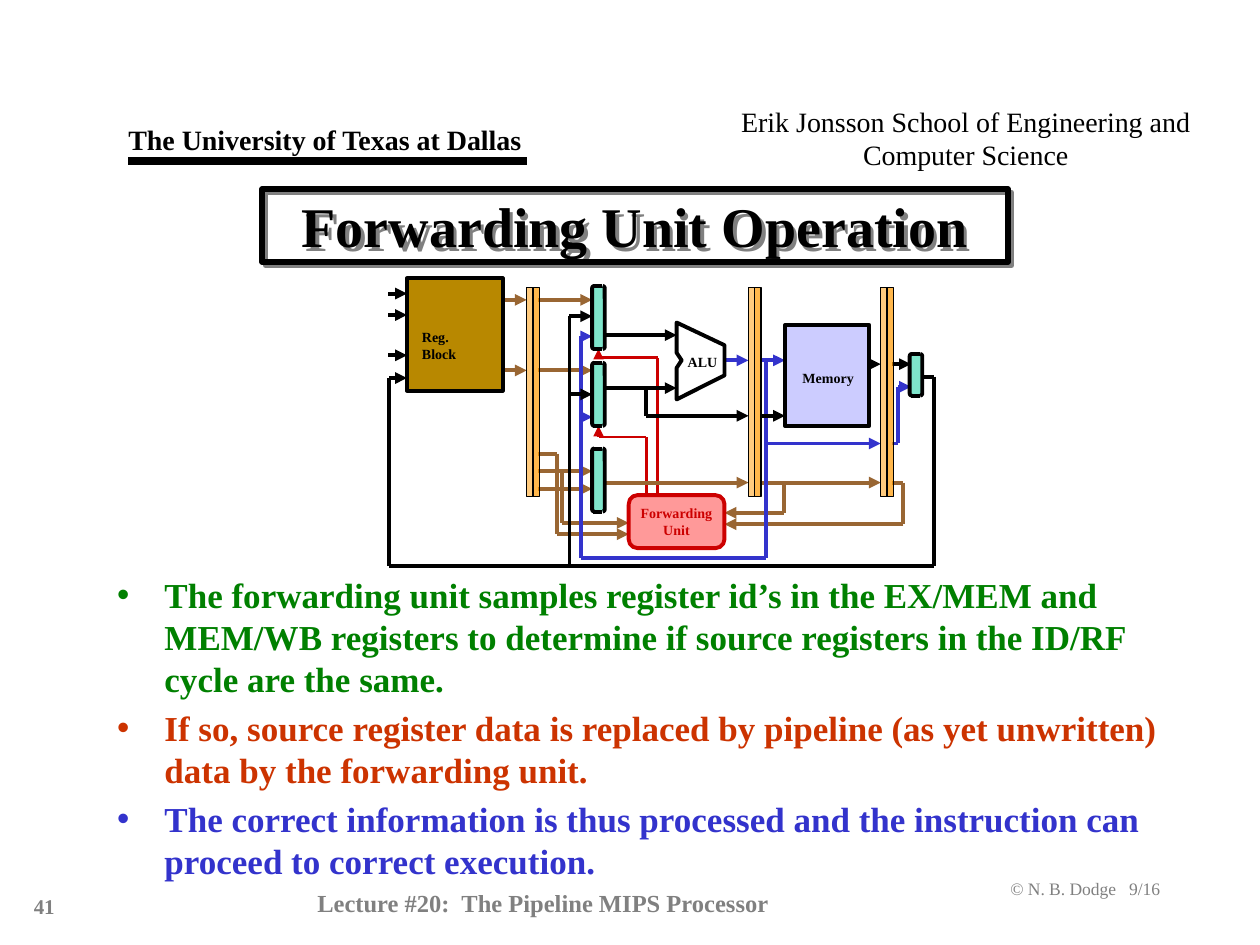
import itertools

import pptx
import pptx.dml.color
import pptx.enum.shapes
import pptx.enum.text
import pptx.oxml.ns
import pptx.oxml.xmlchemy
import pptx.util

Inches = pptx.util.Inches
Pt = pptx.util.Pt
Shape = pptx.enum.shapes.MSO_SHAPE
Align = pptx.enum.text.PP_ALIGN
Anchor = pptx.enum.text.MSO_ANCHOR

FONT = "Times New Roman"
BLACK, GREY, BROWN, BLUE, RED = "000000", "808080", "996633", "3333CC", "CC0000"

TITLE = "Forwarding Unit Operation"
BULLETS = [
    ("The forwarding unit samples register id’s in the EX/MEM and MEM/WB registers "
     "to determine if source registers in the ID/RF cycle are the same.", "008000"),
    ("If so, source register data is replaced by pipeline (as yet unwritten) "
     "data by the forwarding unit.", "CC3300"),
    ("The correct information is thus processed and the instruction can proceed "
     "to correct execution.", BLUE),
]

PAGE_TEXTS = [
    ("Erik Jonsson School of Engineering and Computer Science",
     (5.75, 0.78, 3.83, 0.64), 16, BLACK, False, True, Align.CENTER),
    ("The University of Texas at Dallas",
     (0.92, 0.92, 3.36, 0.37), 16, BLACK, True, False, Align.LEFT),
    ("© N. B. Dodge   9/16", (7.92, 6.92, 1.41, 0.27), 10, GREY, False, False, Align.LEFT),
    ("41", (0.17, 7.04, 0.4, 0.3), 12, GREY, True, False, Align.LEFT),
    ("Lecture #20:  The Pipeline MIPS Processor",
     (2.42, 7, 5, 0.33), 14, GREY, True, True, Align.LEFT),
]
BLOCK_LABELS = [
    ("ALU", (5.36, 2.76, 0.44, 0.23)),
    ("Reg. Block", (3.25, 2.56, 0.71, 0.23)),
    ("Memory", (6.27, 2.88, 0.61, 0.23)),
]

SELECT_WIRES = [
    [(5.13, 3.93), (5.13, 3.47), (4.75, 3.47), (4.75, 3.38)],
    [(5.22, 3.93), (5.22, 2.84), (4.75, 2.84), (4.75, 2.77)],
]
REGISTER_ID_WIRES = [
    [(3.99, 2.38), (4.18, 2.38)],
    [(3.99, 2.94), (4.18, 2.94)],
    [(4.27, 2.38), (4.7, 2.38)],
    [(4.27, 2.94), (4.7, 2.94)],
    [(4.27, 3.74), (4.7, 3.74)],
    [(4.27, 3.88), (4.7, 3.88)],
    [(4.46, 3.74), (4.46, 4.15), (4.99, 4.15)],
    [(4.27, 3.6), (4.42, 3.6), (4.42, 4.24), (4.99, 4.24)],
    [(4.8, 3.83), (5.94, 3.83)],
    [(6.04, 3.83), (6.99, 3.83)],
    [(6.22, 3.83), (6.22, 4.07), (5.75, 4.07)],
    [(7.08, 3.83), (7.17, 3.83), (7.17, 4.16), (5.75, 4.16)],
]
FORWARD_WIRES = [
    [(5.75, 2.86), (5.94, 2.86)],
    [(6.04, 2.86), (6.23, 2.86)],
    [(6.08, 2.86), (6.08, 4.43), (4.61, 4.43), (4.61, 2.67), (4.7, 2.67)],
    [(4.61, 3.31), (4.7, 3.31)],
    [(6.08, 3.52), (6.99, 3.52)],
    [(7.08, 3.52), (7.13, 3.52), (7.13, 3.07), (7.23, 3.07)],
]
DATA_WIRES = [
    [(3.08, 2.33), (3.23, 2.33)],
    [(3.08, 2.5), (3.23, 2.5)],
    [(3.08, 2.82), (3.23, 2.82)],
    [(7.32, 2.99), (7.41, 2.99), (7.41, 4.49), (3.09, 4.49), (3.09, 3), (3.23, 3)],
    [(4.52, 4.49), (4.52, 2.51), (4.7, 2.51)],
    [(4.52, 3.13), (4.7, 3.13)],
    [(4.8, 2.66), (5.37, 2.66)],
    [(4.8, 3.08), (5.37, 3.08)],
    [(5.13, 3.08), (5.13, 3.3), (5.94, 3.3)],
    [(6.04, 3.3), (6.23, 3.3)],
    [(6.89, 2.89), (6.99, 2.89)],
    [(7.08, 2.89), (7.23, 2.89)],
]
WIRING = [(SELECT_WIRES, RED, 1.5), (REGISTER_ID_WIRES, BROWN, 2.25),
          (FORWARD_WIRES, BLUE, 2.25), (DATA_WIRES, BLACK, 2.25)]

ALU_OUTLINE = [(5.37, 2.56), (5.75, 2.74), (5.75, 2.98), (5.37, 3.17),
               (5.37, 2.92), (5.41, 2.86), (5.37, 2.8)]
LATCH_LEFTS = [4.18, 5.94, 6.99]
MUXES = [(4.7, 2.27, 0.5), (4.7, 2.88, 0.5), (4.7, 3.56, 0.5), (7.22, 2.81, 0.33)]


def rgb(colour):
    return pptx.dml.color.RGBColor.from_string(colour)


def add_xml(parent, tag, **attributes):
    child = pptx.oxml.xmlchemy.OxmlElement(tag)
    for name, value in attributes.items():
        child.set(name, str(value))
    parent.append(child)
    return child


def format_text(box, size, colour, bold=True, align=None):
    for para in box.text_frame.paragraphs:
        para.alignment = align
        for span in para.runs:
            span.font.name = FONT
            span.font.size = Pt(size)
            span.font.bold = bold
            span.font.color.rgb = rgb(colour)


def place(box, left, top, width, height):
    box.left, box.top = Inches(left), Inches(top)
    box.width, box.height = Inches(width), Inches(height)


def add_text(page, text, area, size, colour, bold=True, wrap=False, align=Align.LEFT):
    box = page.shapes.add_textbox(*map(Inches, area))
    box.text_frame.word_wrap = wrap
    box.text_frame.text = text
    format_text(box, size, colour, bold, align)


def add_line(page, start, end, colour, width, arrow=False):
    line = page.shapes.add_connector(
        pptx.enum.shapes.MSO_CONNECTOR.STRAIGHT, *map(Inches, start + end))
    line.line.color.rgb = rgb(colour)
    line.line.width = Pt(width)
    if arrow:
        add_xml(line.line._get_or_add_ln(), "a:tailEnd", type="triangle")
    add_xml(line._element.spPr, "a:effectLst")


def add_route(page, points, colour, width):
    for start, end in itertools.pairwise(points):
        add_line(page, start, end, colour, width, end == points[-1])


def style_shape(shape, fill, outline, width, opacity=100):
    shape.shadow.inherit = False
    shape.fill.solid()
    shape.fill.fore_color.rgb = rgb(fill)
    if opacity < 100:
        colour = shape._element.spPr.find(".//" + pptx.oxml.ns.qn("a:srgbClr"))
        add_xml(colour, "a:alpha", val=opacity * 1000)
    shape.line.color.rgb = rgb(outline)
    shape.line.width = Pt(width)


def add_block(page, kind, area, fill, outline=BLACK, width=2.25, opacity=100):
    shape = page.shapes.add_shape(kind, *map(Inches, area))
    style_shape(shape, fill, outline, width, opacity)
    return shape


def add_mux(page, left, top, height):
    add_block(page, Shape.DOUBLE_BRACKET, (left, top, 0.1, height), "00CC99", opacity=50)
    for edge in (top, top + height):
        add_line(page, (left + 0.01, edge), (left + 0.08, edge), BLACK, 2.25)


def add_datapath(page):
    for routes, colour, width in WIRING:
        for points in routes:
            add_route(page, points, colour, width)
    outline = [(Inches(x), Inches(y)) for x, y in ALU_OUTLINE]
    builder = page.shapes.build_freeform(*outline[0])
    builder.add_line_segments(outline[1:], close=True)
    style_shape(builder.convert_to_shape(), "FFFFFF", BLACK, 2.25)
    add_block(page, Shape.RECTANGLE, (3.23, 2.21, 0.76, 0.89), "B88800")
    add_block(page, Shape.RECTANGLE, (6.23, 2.58, 0.67, 0.8), "CCCCFF")
    for left in LATCH_LEFTS:
        for offset, opacity in ((0, 50), (0.05, 70)):
            add_block(page, Shape.RECTANGLE, (left + offset, 2.28, 0.05, 1.66),
                      "FF9900", width=0.75, opacity=opacity)
    for mux in MUXES:
        add_mux(page, *mux)
    unit = add_block(page, Shape.ROUNDED_RECTANGLE, (4.99, 3.93, 0.76, 0.42), "FF9999", RED)
    unit.text_frame.text = "Forwarding\nUnit"
    unit.text_frame.word_wrap = False
    unit.text_frame.vertical_anchor = Anchor.MIDDLE
    format_text(unit, 8, RED, align=Align.CENTER)
    for text, area in BLOCK_LABELS:
        add_text(page, text, area, 8, BLACK)


def fill_title(title):
    place(title, 2.08, 1.5, 5.92, 0.58)
    title.text_frame.text = TITLE
    title.text_frame.auto_size = pptx.enum.text.MSO_AUTO_SIZE.NONE
    title.text_frame.vertical_anchor = Anchor.MIDDLE
    format_text(title, 32, BLACK, align=Align.CENTER)
    title.line.color.rgb = rgb(BLACK)
    title.line.width = Pt(3)
    effects = add_xml(title._element.spPr, "a:effectLst")
    shadow = add_xml(effects, "a:outerShdw", dist=Pt(2.8), dir=45 * 60000, algn="ctr")
    add_xml(shadow, "a:srgbClr", val=GREY)


def fill_body(body):
    place(body, 0.83, 4.5, 8.5, 2.5)
    body.text_frame.text = "\n".join(text for text, colour in BULLETS)
    body.text_frame.auto_size = pptx.enum.text.MSO_AUTO_SIZE.NONE
    format_text(body, 20, BLACK)
    for index, (para, (text, colour)) in enumerate(zip(body.text_frame.paragraphs, BULLETS)):
        para.space_before = Pt(4 if index else 0)
        para.runs[0].font.color.rgb = rgb(colour)


def main():
    deck = pptx.Presentation()
    deck.slide_width, deck.slide_height = Inches(10), Inches(7.5)
    page = deck.slides.add_slide(deck.slide_layouts[1])
    fill_title(page.shapes.title)
    fill_body(page.placeholders[1])
    for item in PAGE_TEXTS:
        add_text(page, *item)
    add_line(page, (1.02, 1.28), (4.18, 1.28), BLACK, 4.5)
    add_datapath(page)
    deck.save("out.pptx")


if __name__ == "__main__":
    main()
